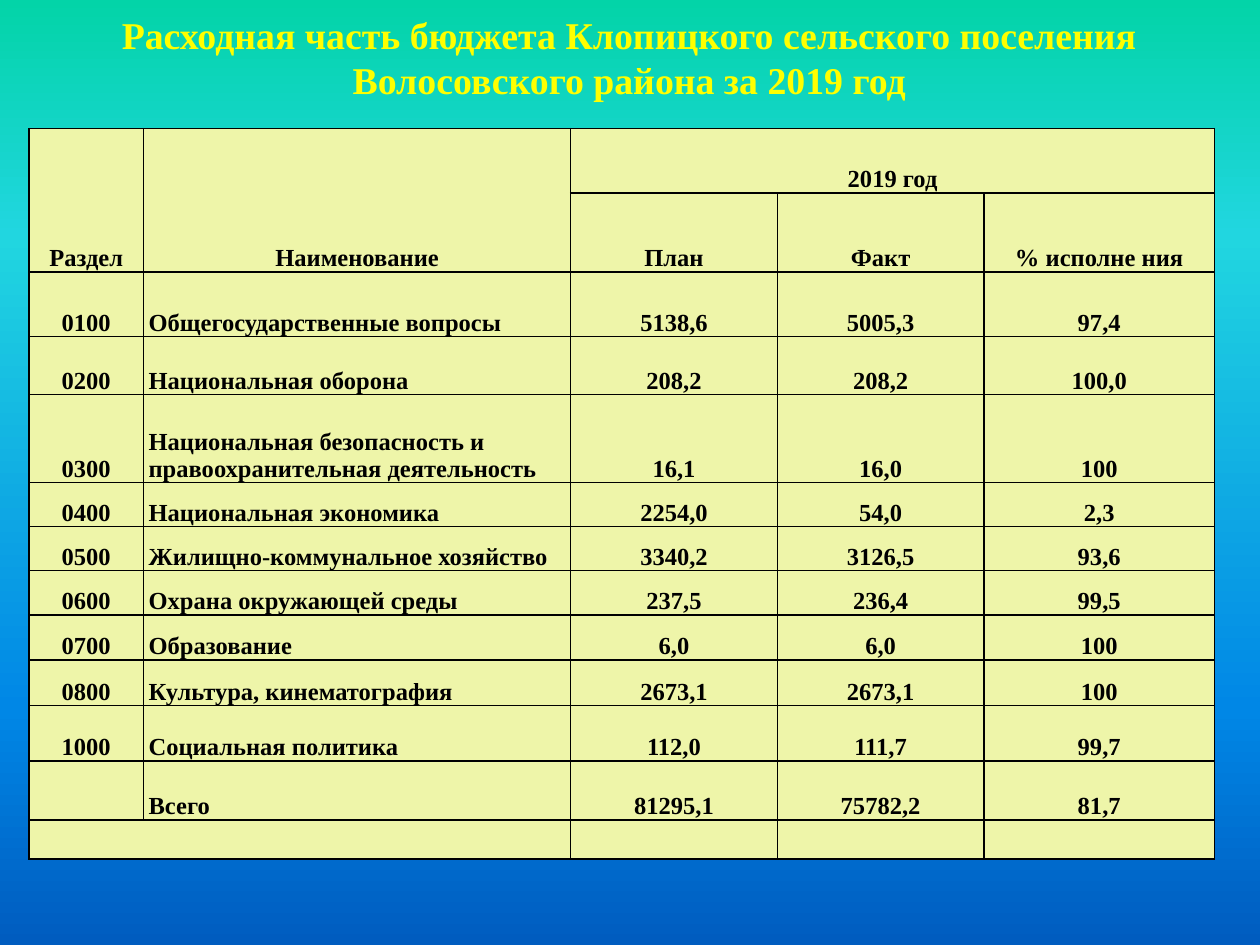
from dataclasses import dataclass

from lxml.etree import SubElement
from pptx import Presentation
from pptx.dml.color import RGBColor as Color
from pptx.enum.text import MSO_ANCHOR as Anchor, PP_ALIGN as Align
from pptx.oxml import parse_xml
from pptx.oxml.ns import nsdecls, qn
from pptx.util import Inches, Pt


@dataclass(frozen=True)
class Theme:
    font: str = "Times New Roman"
    title_size: float = 21.6
    table_size: float = 14
    title_color: str = "FFFF00"
    text_color: str = "000000"
    cell_color: str = "EEF5A9"
    border_color: str = "000000"
    border_width: float = 1
    background: tuple = ((0, "03D4A8"), (25, "21D6E0"), (75, "0087E6"), (100, "005CBF"))


THEME = Theme()
TITLE = "Расходная часть бюджета Клопицкого сельского поселения Волосовского района за 2019 год"
TITLE_BOX = (0.23, 0, 9.53, 0.86)
TABLE_BOX = (0.23, 1.02, 9.41, 5.81)
COLUMN_WIDTHS = (0.91, 3.39, 1.64, 1.64, 1.83)
ROW_HEIGHTS = (0.51, 0.63, 0.51, 0.46, 0.7, 0.35, 0.35, 0.35, 0.36, 0.36, 0.44, 0.47, 0.31)
HEADER_ROWS = 2
NAME_COLUMN = 1
BUDGET = (
    ("Раздел", "Наименование", "2019 год", "", ""),
    ("", "", "План", "Факт", "% исполне ния"),
    ("0100", "Общегосударственные вопросы", "5138,6", "5005,3", "97,4"),
    ("0200", "Национальная оборона", "208,2", "208,2", "100,0"),
    ("0300", "Национальная безопасность и правоохранительная деятельность", "16,1", "16,0", "100"),
    ("0400", "Национальная экономика", "2254,0", "54,0", "2,3"),
    ("0500", "Жилищно-коммунальное хозяйство", "3340,2", "3126,5", "93,6"),
    ("0600", "Охрана окружающей среды", "237,5", "236,4", "99,5"),
    ("0700", "Образование", "6,0", "6,0", "100"),
    ("0800", "Культура, кинематография", "2673,1", "2673,1", "100"),
    ("1000", "Социальная политика", "112,0", "111,7", "99,7"),
    ("", "Всего", "81295,1", "75782,2", "81,7"),
    ("", "", "", "", ""),
)
# Corner cells of each merged area: (row, column) to (row, column)
MERGES = (((0, 0), (1, 0)), ((0, 1), (1, 1)), ((0, 2), (0, 4)), ((12, 0), (12, 1)))


def paint_background(slide):
    fill = slide.background.fill
    fill.gradient()
    fill.gradient_angle = 270
    stops = slide.element.find(".//" + qn("a:gsLst"))
    for stop in list(stops):
        stops.remove(stop)
    for percent, color in THEME.background:
        stop = SubElement(stops, qn("a:gs"), pos=str(percent * 1000))
        SubElement(stop, qn("a:srgbClr"), val=color)


def add_text(frame, text, size, color, align):
    paragraph = frame.paragraphs[0]
    paragraph.alignment = align
    run = paragraph.add_run()
    run.text = text
    run.font.name = THEME.font
    run.font.size = Pt(size)
    run.font.bold = True
    run.font.color.rgb = Color.from_string(color)


def add_title(slide, box):
    frame = slide.shapes.add_textbox(*map(Inches, box)).text_frame
    frame.word_wrap = True
    frame.vertical_anchor = Anchor.BOTTOM
    add_text(frame, TITLE, THEME.title_size, THEME.title_color, Align.CENTER)


def add_borders(cell):
    """Draw all four sides; the lines must precede the fill in the cell properties."""
    properties = cell._tc.get_or_add_tcPr()
    for position, side in enumerate(("lnL", "lnR", "lnT", "lnB")):
        properties.insert(position, parse_xml(
            f'<a:{side} {nsdecls("a")} w="{Pt(THEME.border_width)}"><a:solidFill>'
            f'<a:srgbClr val="{THEME.border_color}"/></a:solidFill></a:{side}>'))


def style_cell(cell, is_name):
    cell.fill.solid()
    cell.fill.fore_color.rgb = Color.from_string(THEME.cell_color)
    cell.vertical_anchor = Anchor.BOTTOM
    cell.margin_left = Inches(0.04 if is_name else 0.01)
    cell.margin_right = cell.margin_top = Inches(0.01)
    cell.margin_bottom = 0
    add_borders(cell)


def add_budget_table(slide, box):
    frame = slide.shapes.add_table(len(BUDGET), len(COLUMN_WIDTHS), *map(Inches, box))
    table = frame.table
    table.first_row = table.horz_banding = False
    for column, width in zip(table.columns, COLUMN_WIDTHS):
        column.width = Inches(width)
    for row, height in zip(table.rows, ROW_HEIGHTS):
        row.height = Inches(height)
    for row_index, values in enumerate(BUDGET):
        for column_index, value in enumerate(values):
            cell = table.cell(row_index, column_index)
            is_name = column_index == NAME_COLUMN and row_index >= HEADER_ROWS
            style_cell(cell, is_name)
            if value:
                align = Align.LEFT if is_name else Align.CENTER
                add_text(cell.text_frame, value, THEME.table_size, THEME.text_color, align)
    for first, last in MERGES:
        table.cell(*first).merge(table.cell(*last))


def main():
    presentation = Presentation()
    presentation.slide_width, presentation.slide_height = Inches(10), Inches(7.5)
    slide = presentation.slides.add_slide(presentation.slide_layouts[6])
    paint_background(slide)
    add_title(slide, TITLE_BOX)
    add_budget_table(slide, TABLE_BOX)
    presentation.save("out.pptx")


if __name__ == "__main__":
    main()
